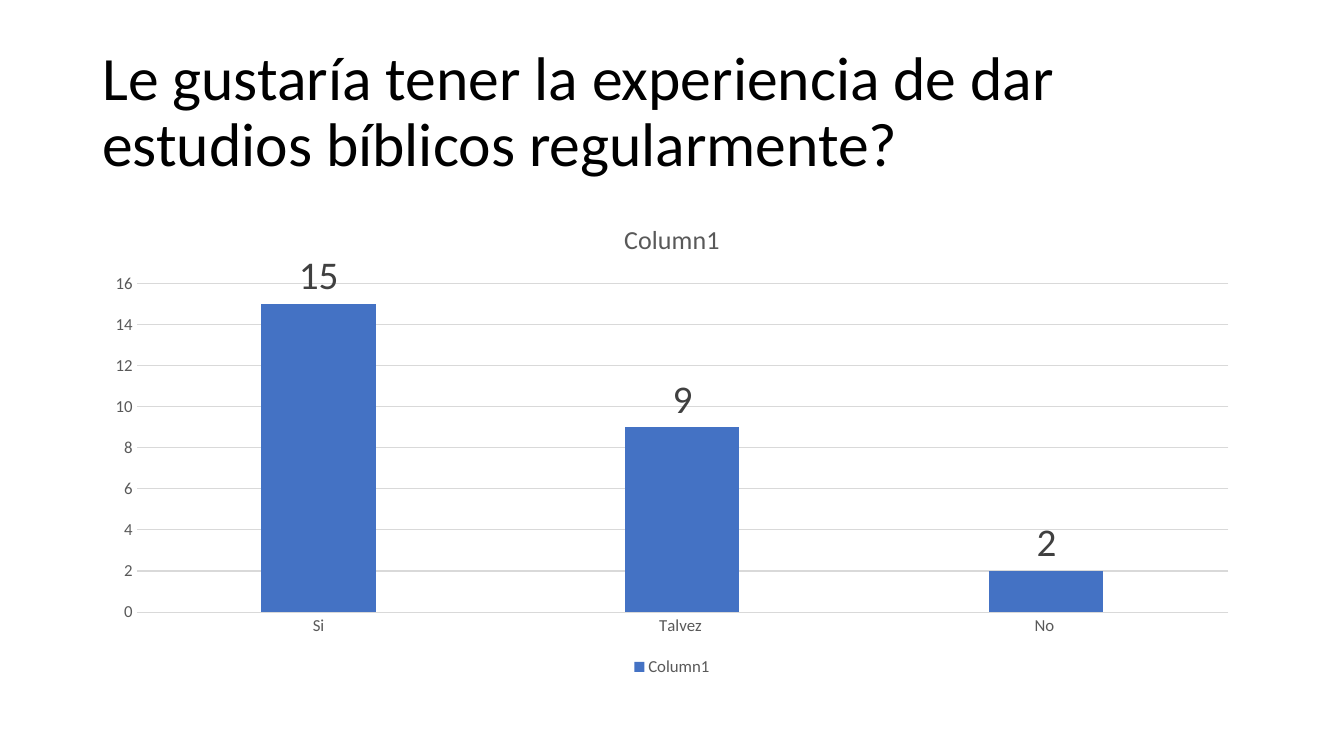
from dataclasses import dataclass

from pptx import Presentation
from pptx.chart.data import CategoryChartData
from pptx.dml.color import RGBColor
from pptx.enum.chart import XL_CHART_TYPE, XL_LABEL_POSITION, XL_LEGEND_POSITION, XL_TICK_MARK
from pptx.enum.text import MSO_ANCHOR
from pptx.util import Pt

COLUMNS = XL_CHART_TYPE.COLUMN_CLUSTERED
OUTSIDE_END = XL_LABEL_POSITION.OUTSIDE_END
BOTTOM = XL_LEGEND_POSITION.BOTTOM
NO_TICK = XL_TICK_MARK.NONE
MIDDLE = MSO_ANCHOR.MIDDLE


@dataclass(frozen=True)
class Theme:
    font: str = "Calibri"
    ink: str = "000000"
    muted: str = "595959"
    label: str = "404040"
    rule: str = "D9D9D9"
    bar: str = "4472C4"
    title_size: float = 44
    chart_title_size: float = 18.6
    label_size: float = 28
    axis_size: float = 12
    rule_width: float = 0.75


@dataclass(frozen=True)
class Answer:
    name: str
    votes: int


THEME = Theme()
LEFT, WIDTH = 66, 828
QUESTION = "Le gustaría tener la experiencia de dar estudios bíblicos regularmente?"
SERIES = "Column1"
ANSWERS = [Answer("Si", 15), Answer("Talvez ", 9), Answer("No ", 2)]


def style_font(font, size: float, color: str) -> None:
    font.name = THEME.font
    font.size = Pt(size)
    font.bold = False
    font.color.rgb = RGBColor.from_string(color)


def write_text(tf, text: str, *, size: float, color: str, spacing: float | None = None) -> None:
    p = tf.paragraphs[0]
    if spacing:
        p.line_spacing = spacing
    r = p.add_run()
    r.text = text
    style_font(r.font, size, color)


def style_rule(line) -> None:
    line.color.rgb = RGBColor.from_string(THEME.rule)
    line.width = Pt(THEME.rule_width)


def add_question(slide) -> None:
    sp = slide.shapes.add_textbox(Pt(LEFT), Pt(28.75), Pt(WIDTH), Pt(104.4))
    tf = sp.text_frame
    tf.word_wrap = True
    tf.vertical_anchor = MIDDLE
    write_text(tf, QUESTION, size=THEME.title_size, color=THEME.ink, spacing=0.9)


def style_axes(chart) -> None:
    for axis in (chart.category_axis, chart.value_axis):
        axis.major_tick_mark = axis.minor_tick_mark = NO_TICK
        style_font(axis.tick_labels.font, THEME.axis_size, THEME.muted)
    style_rule(chart.category_axis.format.line)
    axis = chart.value_axis
    axis.minimum_scale, axis.maximum_scale, axis.major_unit = 0, 16, 2
    axis.format.line.fill.background()
    style_rule(axis.major_gridlines.format.line)


def style_bars(plot) -> None:
    plot.gap_width = 219
    plot.overlap = -27
    plot.vary_by_categories = False
    series = plot.series[0]
    series.format.fill.solid()
    series.format.fill.fore_color.rgb = RGBColor.from_string(THEME.bar)
    labels = series.data_labels
    labels.show_value = True
    labels.position = OUTSIDE_END
    style_font(labels.font, THEME.label_size, THEME.label)


def add_answers_chart(slide) -> None:
    data = CategoryChartData()
    data.categories = [answer.name for answer in ANSWERS]
    data.add_series(SERIES, [answer.votes for answer in ANSWERS])
    frame = slide.shapes.add_chart(COLUMNS, Pt(LEFT), Pt(143.75), Pt(WIDTH), Pt(342.6), data)
    chart = frame.chart
    style_font(chart.font, 10, THEME.ink)
    write_text(chart.chart_title.text_frame, SERIES,
               size=THEME.chart_title_size, color=THEME.muted)
    chart.chart_title.include_in_layout = False
    chart.has_legend = True
    chart.legend.position = BOTTOM
    chart.legend.include_in_layout = False
    style_font(chart.legend.font, THEME.axis_size, THEME.muted)
    style_axes(chart)
    style_bars(chart.plots[0])


def main() -> None:
    prs = Presentation()
    prs.slide_width, prs.slide_height = Pt(960), Pt(540)
    slide = prs.slides.add_slide(prs.slide_layouts[6])
    add_question(slide)
    add_answers_chart(slide)
    prs.save("out.pptx")


if __name__ == "__main__":
    main()
